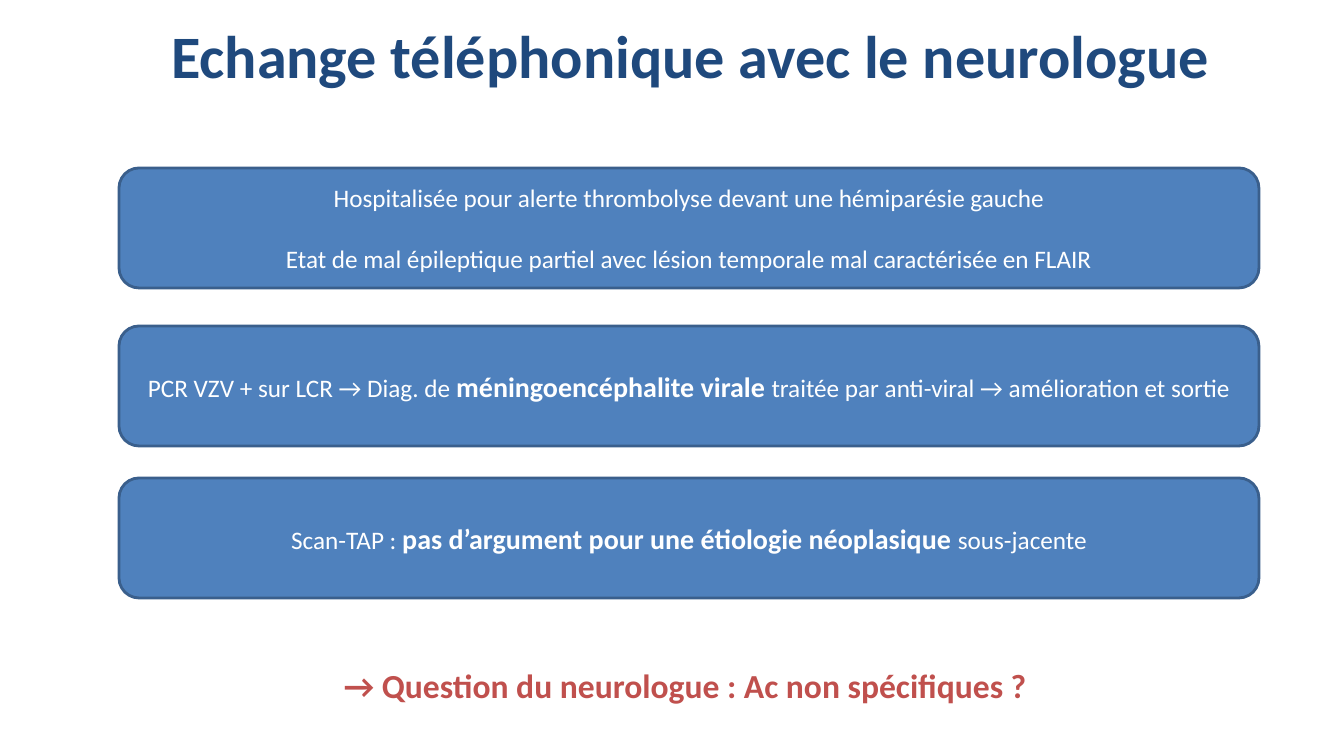
from pptx import Presentation
from pptx.dml.color import RGBColor
from pptx.enum.shapes import MSO_SHAPE as Shape
from pptx.enum.text import MSO_ANCHOR as Anchor, PP_ALIGN as Align
from pptx.util import Emu, Pt

# Content: each card is a list of paragraphs, each paragraph a list of (text, is_key)
TITLE = "Echange téléphonique avec le neurologue"
CARDS = [
    (168, [
        [("Hospitalisée pour alerte thrombolyse devant une hémiparésie gauche", False)],
        [("Etat de mal épileptique partiel avec lésion temporale mal caractérisée en FLAIR", False)],
    ]),
    (326, [[
        ("PCR VZV + sur LCR → Diag. de ", False),
        ("méningoencéphalite virale ", True),
        ("traitée par anti-viral → amélioration et sortie", False),
    ]]),
    (478, [[
        ("Scan-TAP : ", False),
        ("pas d’argument pour une étiologie néoplasique ", True),
        ("sous-jacente", False),
    ]]),
]
QUESTION = "→ Question du neurologue : Ac non spécifiques ?"

# Layout in px
PAGE_SIZE = (1344, 756)
TITLE_AREA = (85, 0, 1210, 116)
CARD_LEFT, CARD_WIDTH, CARD_HEIGHT = 119, 1140, 120
QUESTION_AREA = (334, 660, 710, 50)

FONT = "Calibri"
NAVY, BLUE, EDGE, WHITE, RED = "1F497D", "4F81BD", "3A5F8C", "FFFFFF", "C0504D"


def px(length):
    return Emu(round(length * 914400 / 100.8))


def color(hex_code):
    return RGBColor.from_string(hex_code)


def add_span(para, text, *, size, fill, bold=False):
    span = para.add_run()
    span.text = text
    font = span.font
    font.name, font.size, font.bold = FONT, Pt(size), bold
    font.color.rgb = color(fill)


deck = Presentation()
deck.slide_width, deck.slide_height = map(px, PAGE_SIZE)
page = deck.slides.add_slide(deck.slide_layouts[6])

# Title
frame = page.shapes.add_textbox(*map(px, TITLE_AREA)).text_frame
frame.word_wrap = True
frame.vertical_anchor = Anchor.MIDDLE
frame.margin_left = frame.margin_right = px(13)
frame.margin_top, frame.margin_bottom = px(0), px(7)
frame.paragraphs[0].alignment = Align.CENTER
add_span(frame.paragraphs[0], TITLE, size=43, fill=NAVY, bold=True)

# Cards
for top, lines in CARDS:
    area = (CARD_LEFT, top, CARD_WIDTH, CARD_HEIGHT)
    box = page.shapes.add_shape(Shape.ROUNDED_RECTANGLE, *map(px, area))
    box.shadow.inherit = False
    box.fill.solid()
    box.fill.fore_color.rgb = color(BLUE)
    box.line.color.rgb = color(EDGE)
    box.line.width = Pt(2)
    frame = box.text_frame
    frame.word_wrap = True
    frame.vertical_anchor = Anchor.MIDDLE
    for index, line in enumerate(lines):
        para = frame.add_paragraph() if index else frame.paragraphs[0]
        para.alignment = Align.CENTER
        para.space_before = Pt(22 if index else 0)
        for text, is_key in line:
            add_span(para, text, size=20 if is_key else 18, fill=WHITE, bold=is_key)

# Closing question
frame = page.shapes.add_textbox(*map(px, QUESTION_AREA)).text_frame
frame.word_wrap = False
add_span(frame.paragraphs[0], QUESTION, size=24, fill=RED, bold=True)

deck.save("out.pptx")
